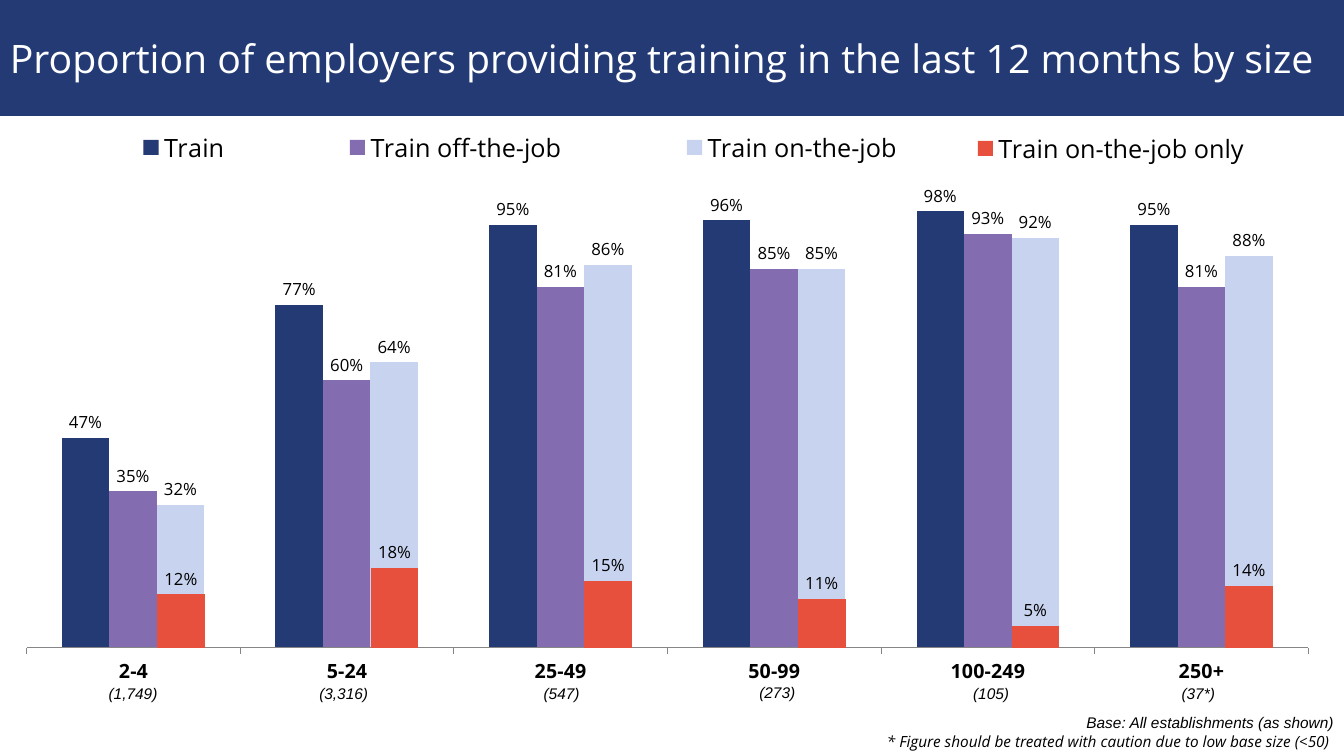
"""Build a slide of employer training rates by establishment size."""
from dataclasses import dataclass

from lxml import etree
from pptx import Presentation
from pptx.chart.data import CategoryChartData
from pptx.dml.color import RGBColor
from pptx.enum.chart import (XL_CHART_TYPE, XL_LABEL_POSITION as LabelPos,
                             XL_LEGEND_POSITION as LegendPos, XL_TICK_LABEL_POSITION as TickPos,
                             XL_TICK_MARK as Tick)
from pptx.enum.shapes import MSO_SHAPE
from pptx.enum.text import MSO_ANCHOR, PP_ALIGN
from pptx.oxml import parse_xml
from pptx.oxml.ns import nsdecls, qn
from pptx.util import Inches, Pt

NAVY, PURPLE, PALE, RED = "233A75", "836DB0", "C8D3EF", "E8503E"
BLACK, WHITE, GRAY = "000000", "FFFFFF", "868686"
FONT = "Open Sans"
SIZES = ["2-4", "5-24", "25-49", "50-99", "100-249", "250+"]
PLOT_BOX = (0, 0.208, 0.954, 0.637)


@dataclass
class Series:
    name: str
    color: str
    values: list[float | None]


@dataclass
class BarChart:
    top: float
    legend_box: tuple[float, float, float, float]
    series: list[Series]
    hidden_entries: int = 0
    show_sizes: bool = False


@dataclass
class Note:
    lines: list[tuple[str, str]]
    left: float
    top: float
    width: float = 1.2
    height: float = 0.29
    align: PP_ALIGN = PP_ALIGN.CENTER


CHARTS = [
    BarChart(0.57, (0, 0.094, 0.735, 0.07), [
        Series("Train", NAVY, [0.47, 0.77, 0.95, 0.96, 0.98, 0.95]),
        Series("Train off-the-job", PURPLE, [0.35, 0.6, 0.81, 0.85, 0.93, 0.81]),
        Series("Train on-the-job", PALE, [0.32, 0.64, 0.86, 0.85, 0.92, 0.88]),
    ]),
    BarChart(0.58, (0.695, 0.094, 0.224, 0.07), [
        Series("Series 1", PALE, [None] * 6),
        Series("Series 2", PURPLE, [None] * 6),
        Series("Train on-the-job only", RED, [0.12, 0.18, 0.15, 0.11, 0.05, 0.14]),
    ], hidden_entries=2, show_sizes=True),
]
NOTES = [
    Note([("Base: All establishments (as shown)", "Arial"),
          ("* Figure should be treated with caution due to low base size (<50) ", FONT)],
         6.21, 7.03, 7.12, 0.47, PP_ALIGN.RIGHT),
    Note([("(1,749)", "Arial")], 0.72, 6.74),
    Note([("(3,316)", "Arial")], 2.81, 6.74),
    Note([("(547)", "Arial")], 4.97, 6.74),
    Note([("(273)", "Arial")], 7.11, 6.73),
    Note([("(105)", "Arial")], 9.23, 6.74),
    Note([("(37*)", "Arial")], 11.62, 6.74, 0.61, align=PP_ALIGN.LEFT),
]


def rgb(color: str) -> RGBColor:
    return RGBColor.from_string(color)


def style_font(font, size: float, color: str = BLACK, name: str = FONT,
               bold: bool = False, italic: bool = False) -> None:
    font.name, font.size, font.bold, font.italic = name, Pt(size), bold, italic
    font.color.rgb = rgb(color)


def manual_layout(box: tuple[float, float, float, float], inner: bool = False):
    target = '<c:layoutTarget val="inner"/>' if inner else ""
    modes = "".join(f'<c:{m}Mode val="edge"/>' for m in "xy")
    sides = "".join(f'<c:{k} val="{v}"/>' for k, v in zip("xywh", box))
    return parse_xml(f'<c:layout {nsdecls("c")}><c:manualLayout>{target}{modes}{sides}'
                     '</c:manualLayout></c:layout>')


def no_fill():
    return parse_xml(f'<c:spPr {nsdecls("c", "a")}><a:noFill/><a:ln><a:noFill/></a:ln></c:spPr>')


def drop_layout(element) -> None:
    for old in element.findall(qn("c:layout")):
        element.remove(old)


def format_legend(chart, spec: BarChart) -> None:
    chart.has_legend = True
    legend = chart.legend
    legend.position = LegendPos.RIGHT
    legend.include_in_layout = False
    style_font(legend.font, 18)
    element = legend._element
    drop_layout(element)
    position = element.find(qn("c:legendPos"))
    position.addnext(manual_layout(spec.legend_box))
    for idx in reversed(range(spec.hidden_entries)):
        entry = etree.Element(qn("c:legendEntry"))
        for tag, val in (("c:idx", idx), ("c:delete", 1)):
            etree.SubElement(entry, qn(tag)).set("val", str(val))
        position.addnext(entry)


def format_axes(chart, show_sizes: bool) -> None:
    value = chart.value_axis
    value.minimum_scale, value.maximum_scale, value.major_unit = 0, 1, 0.1
    value.has_major_gridlines = False
    value.visible = False
    category = chart.category_axis
    category.visible = show_sizes
    if show_sizes:
        category.major_tick_mark = Tick.OUTSIDE
        category.tick_label_position = TickPos.LOW
        category.format.line.color.rgb = rgb(GRAY)
        category.format.line.width = Pt(0.75)
        style_font(category.tick_labels.font, 14, bold=True)


def add_bar_chart(s, spec: BarChart) -> None:
    data = CategoryChartData(number_format="0%")
    data.categories = SIZES
    for item in spec.series:
        data.add_series(item.name, item.values)
    chart = s.shapes.add_chart(XL_CHART_TYPE.COLUMN_CLUSTERED, Inches(0.26), Inches(spec.top),
                               Inches(13.33), Inches(6.92), data).chart
    chart.has_title = False
    style_font(chart.font, 18)
    plot = chart.plots[0]
    plot.gap_width, plot.overlap, plot.vary_by_categories = 150, 0, False
    for item, series in zip(spec.series, plot.series):
        series.format.fill.solid()
        series.format.fill.fore_color.rgb = rgb(item.color)
        labels = series.data_labels
        labels.show_value = True
        labels.position = LabelPos.OUTSIDE_END
        labels.number_format, labels.number_format_is_linked = "0%", False
        style_font(labels.font, 12)
    format_axes(chart, spec.show_sizes)
    format_legend(chart, spec)
    body = chart._chartSpace.find(qn("c:chart"))
    body.addnext(no_fill())
    area = body.find(qn("c:plotArea"))
    drop_layout(area)
    area.insert(0, manual_layout(PLOT_BOX, inner=True))
    area.append(no_fill())


def add_title(s, text: str) -> None:
    sp = s.shapes.add_shape(MSO_SHAPE.RECTANGLE, 0, 0, Inches(13.33), Inches(1.15))
    sp.shadow.inherit = False
    sp.fill.solid()
    sp.fill.fore_color.rgb = rgb(NAVY)
    sp.line.fill.background()
    tf = sp.text_frame
    tf.text = text
    tf.word_wrap = True
    tf.vertical_anchor = MSO_ANCHOR.MIDDLE
    p = tf.paragraphs[0]
    p.alignment = PP_ALIGN.LEFT
    style_font(p.runs[0].font, 28, WHITE)


def add_note(s, note: Note) -> None:
    box = s.shapes.add_textbox(Inches(note.left), Inches(note.top),
                               Inches(note.width), Inches(note.height))
    tf = box.text_frame
    tf.word_wrap = True
    tf.text = "\n".join(text for text, _ in note.lines)
    for p, (_, font) in zip(tf.paragraphs, note.lines):
        p.alignment = note.align
        style_font(p.runs[0].font, 11, name=font, italic=True)


def main() -> None:
    prs = Presentation()
    prs.slide_width, prs.slide_height = Inches(13.33), Inches(7.5)
    s = prs.slides.add_slide(prs.slide_layouts[6])
    for spec in CHARTS:
        add_bar_chart(s, spec)
    add_title(s, "Proportion of employers providing training in the last 12 months by size")
    for note in NOTES:
        add_note(s, note)
    prs.save("out.pptx")


if __name__ == "__main__":
    main()
